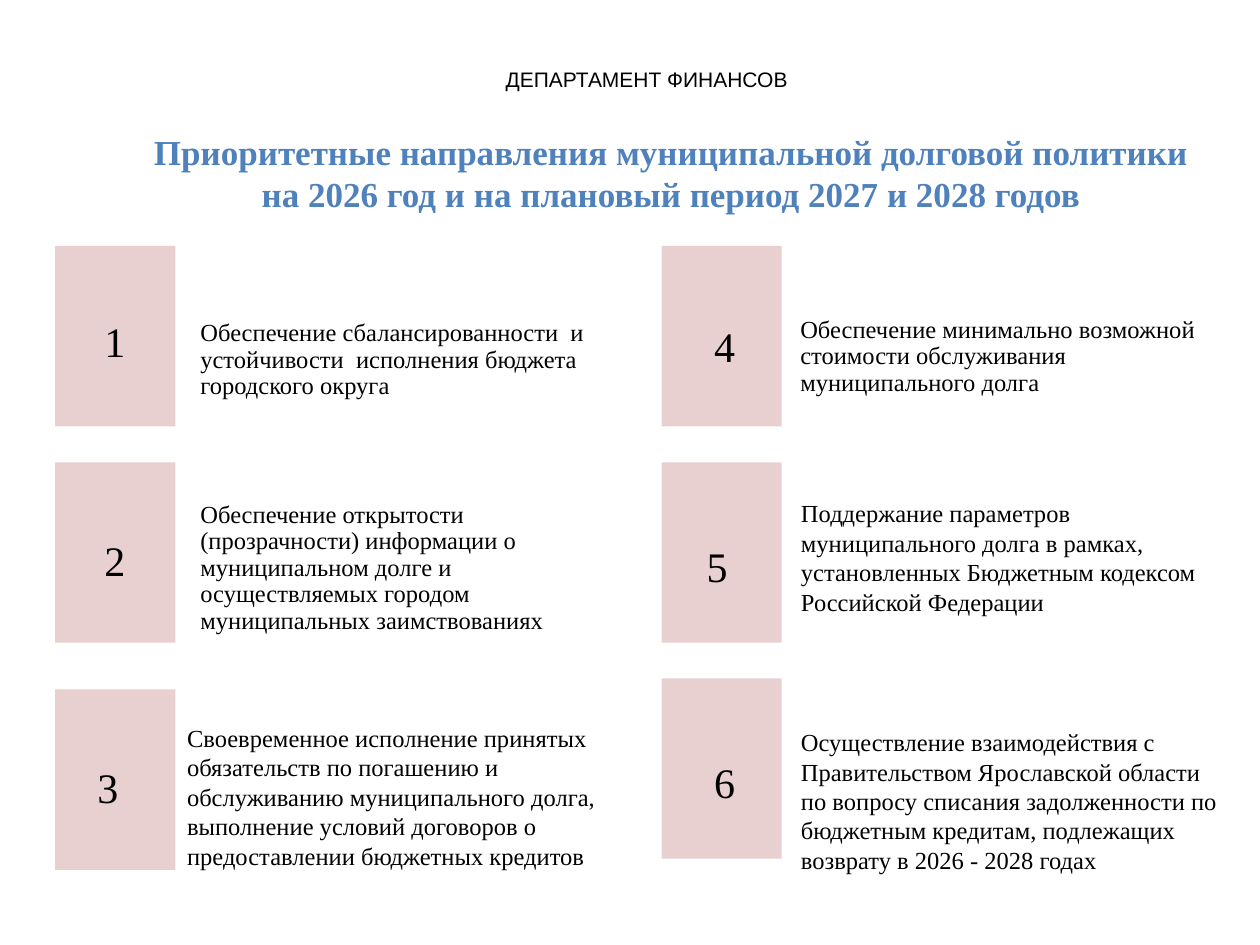
from pptx import Presentation
from pptx.dml.color import RGBColor
from pptx.enum.shapes import MSO_SHAPE
from pptx.enum.text import MSO_ANCHOR, MSO_AUTO_SIZE, PP_ALIGN
from pptx.util import Pt

RECT = MSO_SHAPE.RECTANGLE
MIDDLE, TOP = MSO_ANCHOR.MIDDLE, MSO_ANCHOR.TOP
FIT, NO_FIT = MSO_AUTO_SIZE.SHAPE_TO_FIT_TEXT, MSO_AUTO_SIZE.NONE
LEFT, CENTER = PP_ALIGN.LEFT, PP_ALIGN.CENTER

BLACK = RGBColor(0x00, 0x00, 0x00)
BLUE = RGBColor(0x4F, 0x81, 0xBD)
PINK = RGBColor(0xE8, 0xD0, 0xD0)
SERIF, SANS = "Times New Roman", "Arial"

TILE_W, TILE_H = 68.75, 103.1
COL_1, COL_2 = 31.5, 378
ROW_1, ROW_2 = 140.5, 264.2

# Tile corner, number offset in the tile, text box, lines of text
WRAPPED_ITEMS = [
    ("1", (COL_1, ROW_1), (21, 36), (48.2, 157, 314.5, 98),
     "Обеспечение сбалансированности  и устойчивости  исполнения бюджета городского округа"),
    ("2", (COL_1, ROW_2), (21, 37.5), (48.2, 275.8, 314.5, 98),
     "Обеспечение открытости (прозрачности) информации о муниципальном долге и "
     "осуществляемых городом муниципальных заимствованиях"),
    ("4", (COL_2, ROW_1), (23, 39), (391, 154.8, 314.5, 98),
     "Обеспечение минимально возможной стоимости обслуживания муниципального долга"),
]
LINE_ITEMS = [
    ("3", (COL_1, 394), (17, 37.5), (99.8, 409.6, 260, 92.2), [
        "Своевременное исполнение принятых",
        "обязательств по погашению и",
        "обслуживанию муниципального долга,",
        "выполнение условий договоров о",
        "предоставлении бюджетных кредитов"]),
    ("5", (COL_2, ROW_2), (18.75, 41), (450.6, 281.2, 243.4, 75), [
        "Поддержание параметров",
        "муниципального долга в рамках,",
        "установленных Бюджетным кодексом",
        "Российской Федерации"]),
    ("6", (COL_2, 387.6), (23, 41), (450.6, 412, 254.2, 92.2), [
        "Осуществление взаимодействия с",
        "Правительством Ярославской области",
        "по вопросу списания задолженности по",
        "бюджетным кредитам, подлежащих",
        "возврату в 2026 - 2028 годах"]),
]


def add_text(s, box, lines, size, font=SERIF, color=BLACK, bold=False,
             align=LEFT, wrap=True, anchor=TOP, fit=FIT):
    sp = s.shapes.add_textbox(*map(Pt, box))
    tf = sp.text_frame
    tf.word_wrap = wrap
    tf.auto_size = fit
    tf.vertical_anchor = anchor
    for i, line in enumerate(lines):
        p = tf.paragraphs[0] if i == 0 else tf.add_paragraph()
        p.alignment = align
        r = p.add_run()
        r.text = line
        r.font.name, r.font.size, r.font.bold = font, Pt(size), bold
        r.font.color.rgb = color
    return tf


def add_header(s, department_box, title_box):
    add_text(s, department_box, ["ДЕПАРТАМЕНТ ФИНАНСОВ "], 12, font=SANS, align=CENTER)
    add_text(s, title_box,
             ["Приоритетные направления муниципальной долговой политики ",
              "на 2026 год и на плановый период 2027 и 2028 годов "],
             20, color=BLUE, bold=True, align=CENTER)


def add_tile(s, corner, offset, number):
    x, y = corner
    sp = s.shapes.add_shape(RECT, Pt(x), Pt(y), Pt(TILE_W), Pt(TILE_H))
    sp.shadow.inherit = False
    sp.fill.solid()
    sp.fill.fore_color.rgb = PINK
    sp.line.fill.background()
    add_text(s, (x + offset[0], y + offset[1], 26.5, 36), [number], 24, wrap=False)


def add_wrapped_text(s, box, text):
    tf = add_text(s, box, [text], 14, anchor=MIDDLE, fit=NO_FIT)
    tf.margin_left = Pt(66.3)
    tf.margin_right = tf.margin_top = tf.margin_bottom = Pt(4.2)
    tf.paragraphs[0].line_spacing = 0.9


def main():
    prs = Presentation()
    prs.slide_width, prs.slide_height = Pt(720), Pt(540)
    s = prs.slides.add_slide(prs.slide_layouts[6])

    # Department and title
    add_header(s, (257.8, 34.6, 226.8, 21.8), (34.6, 71.3, 702.7, 55.7))

    # Directions with flowing text
    for number, corner, offset, box, text in WRAPPED_ITEMS:
        add_tile(s, corner, offset, number)
        add_wrapped_text(s, box, text)

    # Directions set line by line
    for number, corner, offset, box, lines in LINE_ITEMS:
        add_tile(s, corner, offset, number)
        add_text(s, box, lines, 14, wrap=False)

    prs.save("out.pptx")


if __name__ == "__main__":
    main()
